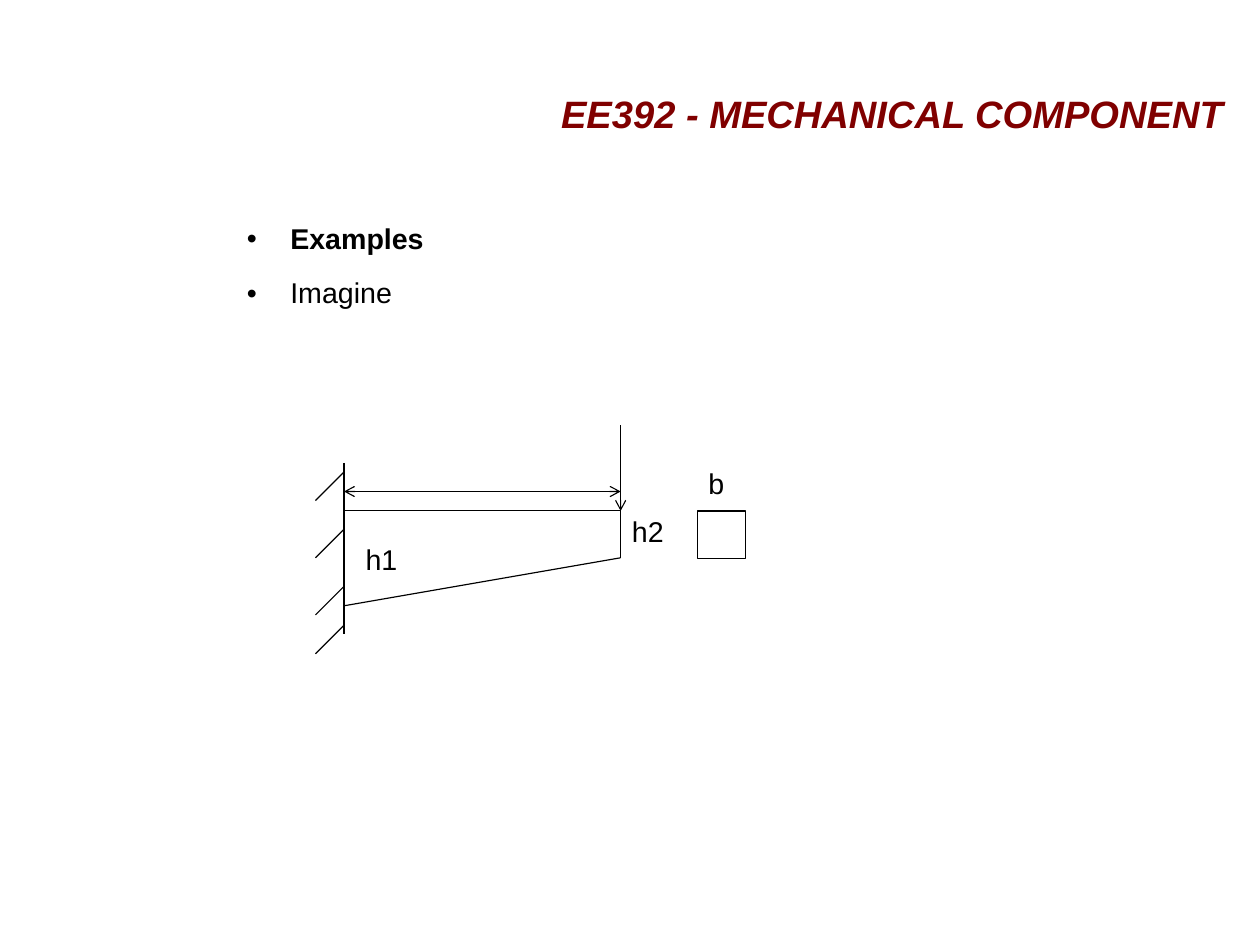
import pptx
import pptx.dml.color
import pptx.enum.shapes
import pptx.enum.text
import pptx.oxml
import pptx.oxml.ns
import pptx.util
from pptx.util import Inches

TITLE = "EE392 - MECHANICAL COMPONENT"
BULLETS = [("Examples", True), ("Imagine", False)]
LABELS = [("h1", 3.1, 4.72), ("h2", 5.43, 4.47), ("b", 6.1, 4.05)]

BLACK, WHITE, MAROON = "000000", "FFFFFF", "800000"
WALL, TIP = 3.01, 5.43           # left and right ends of the beam
TOP, ROOT, END = 4.47, 5.3, 4.88  # beam top, lower edge at wall and at tip
SPAN = 4.3                       # height of the length arrow
HATCH, STEP = [4.13, 4.63, 5.13, 5.47], 0.25
SIDE = 0.42                      # side of the cross-section

LINES = [
    (WALL, 4.05, WALL, 5.55, ()),
    (WALL, TOP, TIP, TOP, ()),
    (WALL, ROOT, TIP, END, ()),
    (TIP, TOP, TIP, END, ()),
    (WALL, SPAN, TIP, SPAN, ("headEnd", "tailEnd")),
    (TIP, 3.72, TIP, TOP, ("tailEnd",)),
]
LINES += [(WALL, y, WALL - STEP, y + STEP, ()) for y in HATCH]


def color(code):
    return pptx.dml.color.RGBColor.from_string(code)


def node(tag, **attrs):
    item = pptx.oxml.parse_xml(f"<a:{tag} {pptx.oxml.ns.nsdecls('a')}/>")
    for name, value in attrs.items():
        item.set(name, value)
    return item


def write(para, text, size=18, ink=BLACK, bold=False, italic=False,
          align=None, after=0):
    para.alignment = align
    para.line_spacing = 0.93
    para.space_before = pptx.util.Pt(0)
    para.space_after = pptx.util.Pt(after)
    run = para.add_run()
    run.text = text
    font = run.font
    font.name, font.size = "Arial", pptx.util.Pt(size)
    font.bold, font.italic = bold, italic
    font.color.rgb = color(ink)


def bullet(para):
    props = para._p.get_or_add_pPr()
    props.set("marL", str(Inches(0.38)))
    props.set("indent", str(Inches(-0.38)))
    tint = node("buClr")
    tint.append(node("srgbClr", val=BLACK))
    props.extend([tint, node("buFont", typeface="Arial"),
                  node("buChar", char="•")])


def place(holder, left, top, width, height, inset=0):
    """Move a placeholder and return its text frame with set margins."""
    holder.left, holder.top = Inches(left), Inches(top)
    holder.width, holder.height = Inches(width), Inches(height)
    frame = holder.text_frame
    frame.auto_size = pptx.enum.text.MSO_AUTO_SIZE.NONE
    frame.margin_left = frame.margin_right = frame.margin_bottom = 0
    frame.margin_top = Inches(inset)
    return frame


def stroke(line):
    line.color.rgb = color(BLACK)
    line.width = pptx.util.Pt(0.75)


def draw(shapes, x1, y1, x2, y2, heads):
    link = shapes.add_connector(pptx.enum.shapes.MSO_CONNECTOR.STRAIGHT,
                                Inches(x1), Inches(y1), Inches(x2), Inches(y2))
    stroke(link.line)
    props = link.element.spPr
    props.append(node("effectLst"))
    for head in heads:
        props.find(pptx.oxml.ns.qn("a:ln")).append(node(head, type="arrow"))


def main():
    deck = pptx.Presentation()
    deck.slide_width, deck.slide_height = pptx.util.Cm(28), pptx.util.Cm(21)
    slide = deck.slides.add_slide(deck.slide_layouts[1])
    shapes = slide.shapes

    frame = place(shapes.title, 3.98, 0.33, 6.72, 1.37)
    frame.vertical_anchor = pptx.enum.text.MSO_ANCHOR.MIDDLE
    write(frame.paragraphs[0], TITLE, size=24, ink=MAROON, bold=True,
          italic=True, align=pptx.enum.text.PP_ALIGN.RIGHT)

    frame = place(slide.placeholders[1], 2.16, 1.93, 8.49, 4.16, inset=0.03)
    for i, (text, bold) in enumerate(BULLETS):
        para = frame.add_paragraph() if i else frame.paragraphs[0]
        bullet(para)
        write(para, text, bold=bold, after=14.2)

    for line in LINES:
        draw(shapes, *line)

    square = shapes.add_shape(pptx.enum.shapes.MSO_SHAPE.RECTANGLE,
                              Inches(6.1), Inches(TOP),
                              Inches(SIDE), Inches(SIDE))
    square.shadow.inherit = False
    square.fill.solid()
    square.fill.fore_color.rgb = color(WHITE)
    stroke(square.line)

    for text, left, top in LABELS:
        box = shapes.add_textbox(Inches(left), Inches(top),
                                 Inches(0.58), Inches(0.38))
        box.text_frame.word_wrap = True
        write(box.text_frame.paragraphs[0], text)

    deck.save("out.pptx")


if __name__ == "__main__":
    main()
